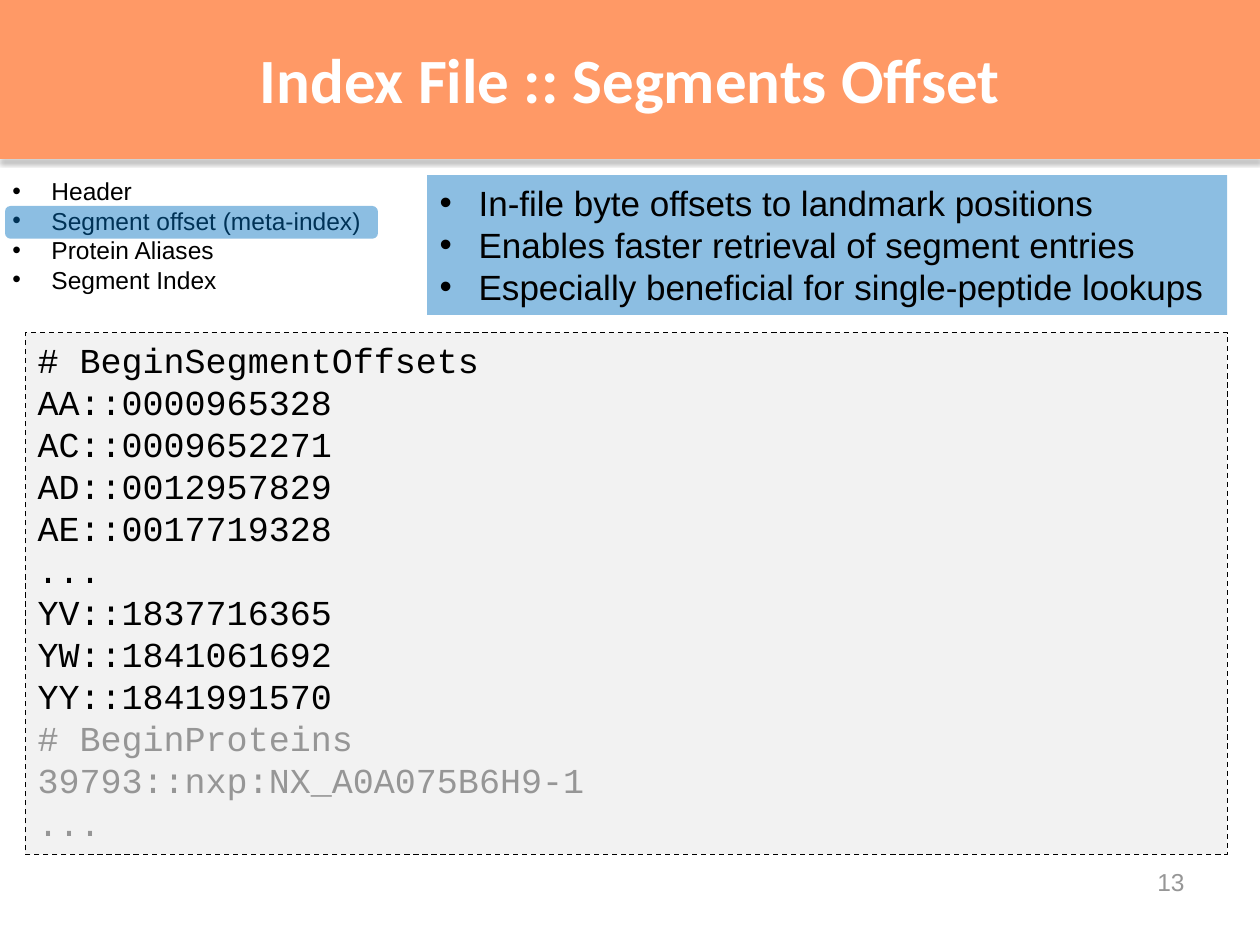
import pptx
import pptx.util
from lxml import etree
from pptx.dml.color import RGBColor
from pptx.enum.dml import MSO_LINE
from pptx.enum.shapes import MSO_CONNECTOR, MSO_SHAPE
from pptx.enum.text import MSO_ANCHOR, PP_ALIGN
from pptx.oxml.ns import qn
from pptx.util import Inches, Pt

ORANGE = RGBColor(0xFF, 0x99, 0x66)
BLUE = RGBColor(0x00, 0x70, 0xC0)
PALE_GRAY = RGBColor(0xF2, 0xF2, 0xF2)
GRAY = RGBColor(0x96, 0x96, 0x96)
BLACK = RGBColor(0x00, 0x00, 0x00)
WHITE = RGBColor(0xFF, 0xFF, 0xFF)

SECTIONS = ["Header", "Segment offset (meta-index)", "Protein Aliases", "Segment Index"]
BENEFITS = [
    "In-file byte offsets to landmark positions",
    "Enables faster retrieval of segment entries",
    "Especially beneficial for single-peptide lookups",
]
OFFSET_LINES = [
    "# BeginSegmentOffsets",
    "AA::0000965328",
    "AC::0009652271",
    "AD::0012957829",
    "AE::0017719328",
    "...",
    "YV::1837716365",
    "YW::1841061692",
    "YY::1841991570",
]
NEXT_LINES = ["# BeginProteins", "39793::nxp:NX_A0A075B6H9-1", "..."]


def add_box(slide, box, fill, shape=MSO_SHAPE.RECTANGLE, opacity=None):
    """Add a filled shape without outline; opacity is a percentage."""
    sp = slide.shapes.add_shape(shape, *map(Inches, box))
    sp.shadow.inherit = False
    sp.fill.solid()
    sp.fill.fore_color.rgb = fill
    sp.line.fill.background()
    if opacity is not None:
        color = sp.fill._xPr.find(qn("a:solidFill"))[0]
        etree.SubElement(color, qn("a:alpha"), val=str(opacity * 1000))
    return sp


def add_bullet(p):
    pPr = p._p.get_or_add_pPr()
    pPr.set("marL", str(Inches(0.31)))
    pPr.set("indent", str(-Inches(0.31)))
    etree.SubElement(pPr, qn("a:buFont"), typeface="Arial")
    etree.SubElement(pPr, qn("a:buChar"), char="•")


def write(sp, lines, size, font="Arial", color=BLACK, bold=False, align=PP_ALIGN.LEFT,
          anchor=MSO_ANCHOR.TOP, bullets=False, wrap=True):
    """Append one paragraph per line to the shape's text."""
    tf = sp.text_frame
    tf.word_wrap = wrap
    tf.vertical_anchor = anchor
    for line in lines:
        p = tf.add_paragraph() if tf.text else tf.paragraphs[0]
        p.alignment = align
        if bullets:
            add_bullet(p)
        r = p.add_run()
        r.text = line
        r.font.size = Pt(size)
        r.font.name = font
        r.font.bold = bold
        r.font.color.rgb = color


def add_title_band(slide, box, title):
    left, top, width, height = box
    bottom = top + height
    rule = slide.shapes.add_connector(
        MSO_CONNECTOR.STRAIGHT, Inches(left), Inches(bottom), Inches(left + width), Inches(bottom))
    rule.line.color.rgb = ORANGE
    rule.line.width = Pt(2)
    effects = etree.SubElement(rule._element.spPr, qn("a:effectLst"))
    shadow = etree.SubElement(effects, qn("a:outerShdw"), blurRad=str(Pt(3.1)),
                              dist=str(Pt(1.6)), dir="5400000", rotWithShape="0")
    color = etree.SubElement(shadow, qn("a:srgbClr"), val=str(BLACK))
    etree.SubElement(color, qn("a:alpha"), val="38000")
    band = add_box(slide, box, ORANGE)
    write(band, [title], 36, font="Calibri", color=WHITE, bold=True,
          align=PP_ALIGN.CENTER, anchor=MSO_ANCHOR.MIDDLE)


def add_section_list(slide, box, current):
    """List the file sections and highlight the current one."""
    left, top, width, height = box
    sp = slide.shapes.add_textbox(*map(Inches, box))
    write(sp, SECTIONS, 14, bullets=True, wrap=False)
    pitch = (height - 0.1) / len(SECTIONS)
    highlight = (left + 0.04, top + 0.05 + current * pitch, width - 0.02, 0.26)
    add_box(slide, highlight, BLUE, shape=MSO_SHAPE.ROUNDED_RECTANGLE, opacity=45)


def add_code_panel(slide, box):
    panel = add_box(slide, box, PALE_GRAY)
    panel.line.color.rgb = BLACK
    panel.line.width = Pt(0.75)
    panel.line.dash_style = MSO_LINE.DASH
    write(panel, OFFSET_LINES, 20, font="Courier New")
    write(panel, NEXT_LINES, 20, font="Courier New", color=GRAY)


def add_benefits(slide, box):
    write(add_box(slide, box, BLUE, opacity=45), BENEFITS, 20, bullets=True)


def add_page_number(slide, box, number):
    sp = slide.shapes.add_textbox(*map(Inches, box))
    write(sp, [str(number)], 14, color=GRAY, align=PP_ALIGN.RIGHT)


def main():
    prs = pptx.Presentation()
    prs.slide_width, prs.slide_height = Inches(10), Inches(7.5)
    s = prs.slides.add_slide(prs.slide_layouts[6])
    add_title_band(s, (0, 0, 10, 1.25), "Index File :: Segments Offset")
    add_page_number(s, (7.17, 6.83, 2.33, 0.52), 13)
    add_section_list(s, (0, 1.35, 2.98, 1.04), current=1)
    add_code_panel(s, (0.2, 2.64, 9.54, 4.14))
    add_benefits(s, (3.39, 1.39, 6.35, 1.11))
    prs.save("out.pptx")


if __name__ == "__main__":
    main()
